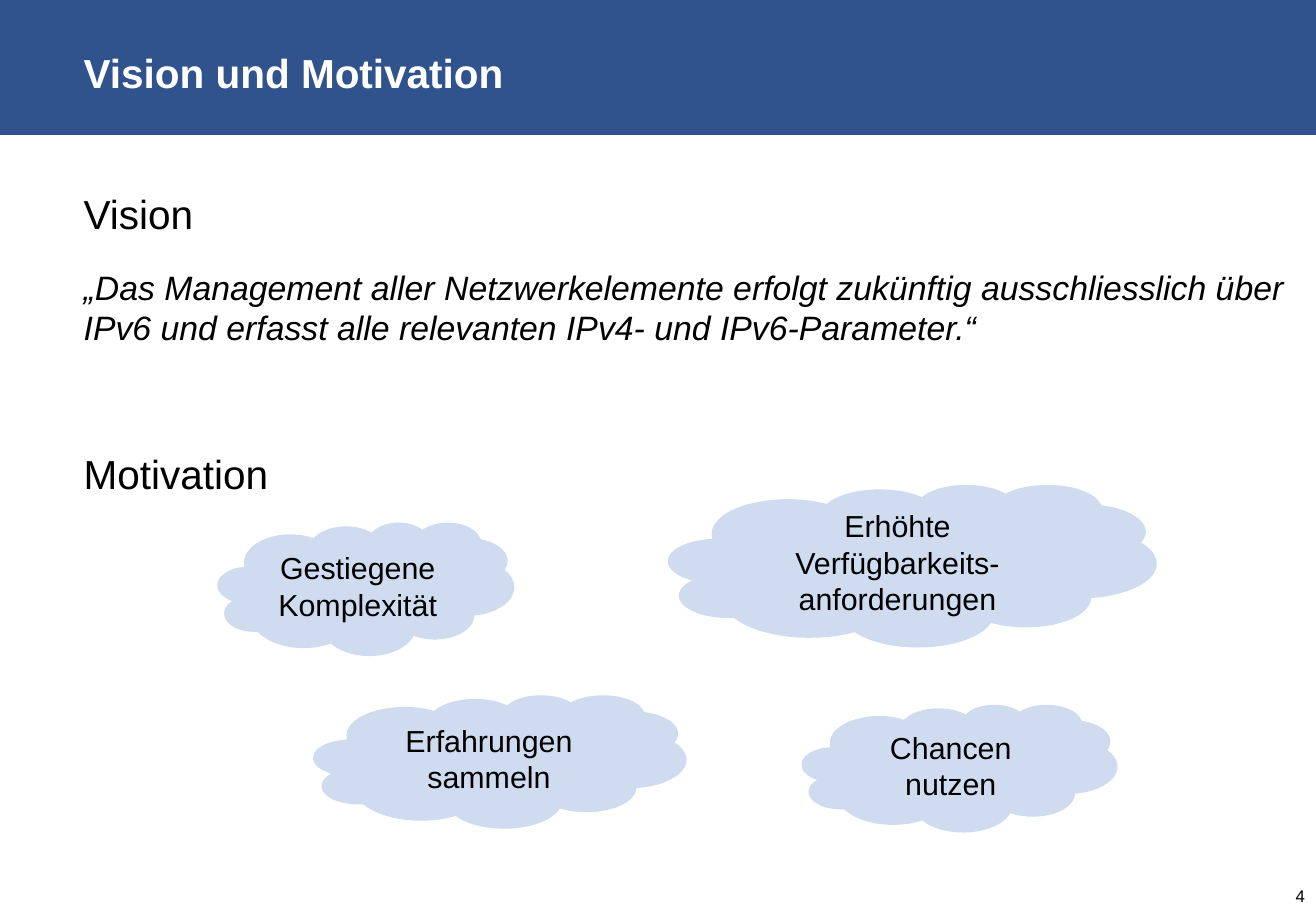
"""Build the slide "Vision und Motivation" with four motivation clouds."""
from pptx import Presentation
from pptx.dml.color import RGBColor
from pptx.enum.shapes import MSO_SHAPE
from pptx.enum.text import MSO_ANCHOR, PP_ALIGN
from pptx.util import Cm, Pt

RECTANGLE, CLOUD = MSO_SHAPE.RECTANGLE, MSO_SHAPE.CLOUD
TOP, MIDDLE = MSO_ANCHOR.TOP, MSO_ANCHOR.MIDDLE
LEFT, CENTER, RIGHT = PP_ALIGN.LEFT, PP_ALIGN.CENTER, PP_ALIGN.RIGHT
BLACK, WHITE, BLUE, PALE_BLUE = "000000", "FFFFFF", "30538D", "CFDBEF"


def color(hex_value):
    return RGBColor.from_string(hex_value)


def write(paragraph, text, size, align=LEFT, hex_value=BLACK, bold=False, italic=False):
    paragraph.alignment = align
    run = paragraph.add_run()
    run.text = text
    run.font.name = "Arial"
    run.font.size = Pt(size)
    run.font.bold = bold
    run.font.italic = italic
    run.font.color.rgb = color(hex_value)


prs = Presentation()
prs.slide_width, prs.slide_height = Cm(27.51), Cm(19.05)
slide = prs.slides.add_slide(prs.slide_layouts[6])

header = slide.shapes.add_shape(RECTANGLE, 0, 0, prs.slide_width, Cm(2.82))
header.shadow.inherit = False
header.fill.solid()
header.fill.fore_color.rgb = color(BLUE)
header.line.fill.background()

frames = []
for top, height, anchor in [(0, 2.82, MIDDLE), (3.96, 14.6, TOP)]:
    frame = slide.shapes.add_textbox(Cm(1.75), Cm(top), Cm(25.2), Cm(height)).text_frame
    frame.word_wrap = True
    frame.vertical_anchor = anchor
    frame.margin_left = frame.margin_right = frame.margin_top = frame.margin_bottom = 0
    frames.append(frame)
title, body = frames

title.paragraphs[0].line_spacing = 1.2
write(title.paragraphs[0], "Vision und Motivation", 24, hex_value=WHITE, bold=True)

write(body.paragraphs[0], "Vision", 24)
quote = body.add_paragraph()
quote.space_before = Pt(17)
write(quote, "„Das Management aller Netzwerkelemente erfolgt zukünftig ausschliesslich über "
      "IPv6 und erfasst alle relevanten IPv4- und IPv6-Parameter.“", 20, italic=True)
motivation = body.add_paragraph()
motivation.space_before = Pt(60)
write(motivation, "Motivation", 24)

page_number = slide.shapes.add_textbox(Cm(24.13), Cm(18.42), Cm(3.4), Cm(0.63)).text_frame
page_number.word_wrap = True
page_number.vertical_anchor = MIDDLE
write(page_number.paragraphs[0], "4", 10, RIGHT)

motives = [
    ("Erfahrungen sammeln", 6.55, 14.53, 7.8, 2.79),
    ("Gestiegene Komplexität", 4.55, 10.92, 6.2, 2.79),
    ("Erhöhte Verfügbarkeits-anforderungen", 13.97, 10.13, 10.21, 3.4),
    ("Chancen nutzen", 16.76, 14.73, 6.6, 2.67),
]
for motive, left, top, width, height in motives:
    cloud = slide.shapes.add_shape(CLOUD, Cm(left), Cm(top), Cm(width), Cm(height))
    cloud.shadow.inherit = False
    cloud.fill.solid()
    cloud.fill.fore_color.rgb = color(PALE_BLUE)
    cloud.line.fill.background()
    label = cloud.text_frame
    label.word_wrap = True
    label.vertical_anchor = MIDDLE
    label.margin_left = Cm(0.2)
    label.margin_right = label.margin_top = label.margin_bottom = Cm(0.1)
    write(label.paragraphs[0], motive, 18, CENTER)

prs.save("out.pptx")
